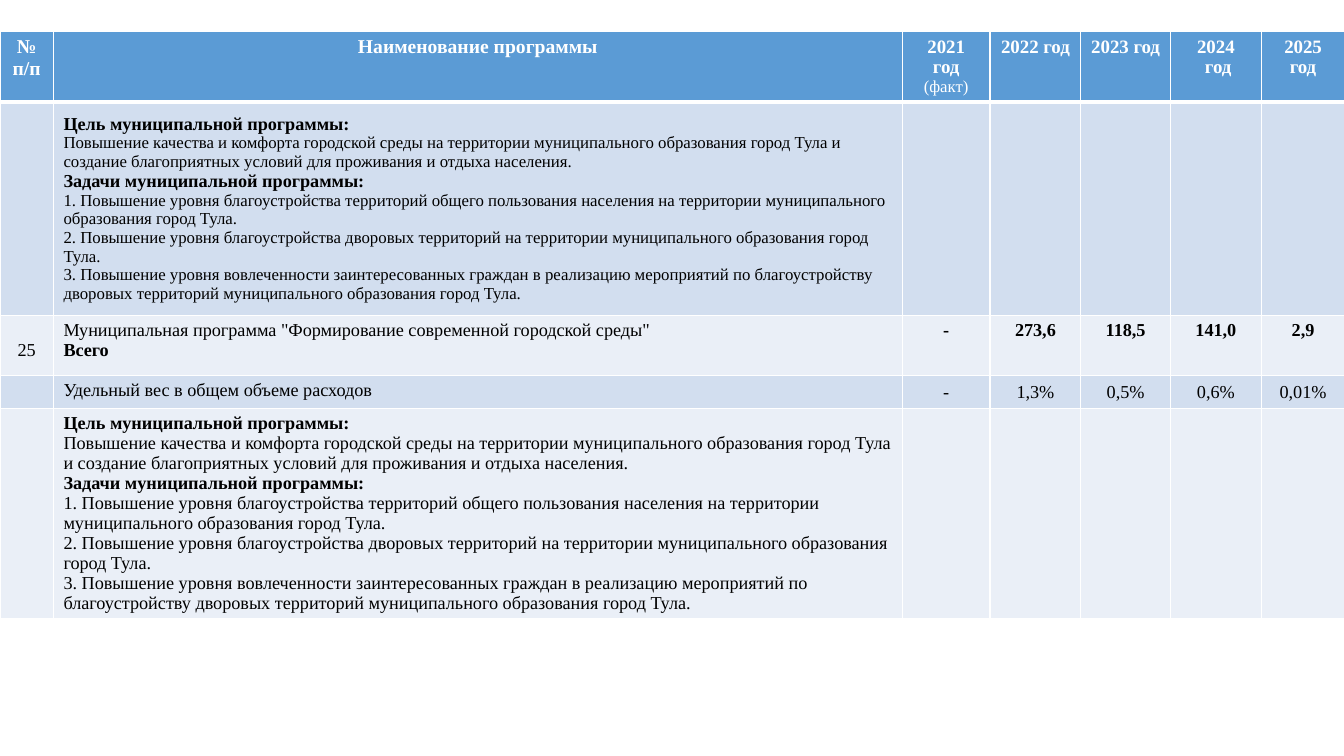
from dataclasses import dataclass

from lxml.etree import SubElement
from pptx import Presentation
from pptx.dml.color import RGBColor
from pptx.enum.text import MSO_ANCHOR, PP_ALIGN
from pptx.oxml.ns import qn
from pptx.util import Inches, Pt


@dataclass(frozen=True)
class Theme:
    font: str = "Times New Roman"
    header_fill: str = "5B9BD5"
    bands: tuple = ("D2DEEF", "EAEFF7")
    white: str = "FFFFFF"
    black: str = "000000"
    title_size: float = 14
    year_size: float = 13.5
    body_size: float = 13
    small_size: float = 12
    thin: float = 1
    thick: float = 3


class ProgramSlide:
    """Draws the programme table on one slide in a shared theme."""

    def __init__(self, presentation, theme):
        self.theme = theme
        self.slide = presentation.slides.add_slide(presentation.slide_layouts[6])

    def add_table(self, left, top, widths, heights):
        shape = self.slide.shapes.add_table(
            len(heights), len(widths), Inches(left), Inches(top),
            Inches(sum(widths)), Inches(sum(heights)))
        table = shape.table
        for column, width in zip(table.columns, widths):
            column.width = Inches(width)
        for row, height in zip(table.rows, heights):
            row.height = Inches(height)
        for index, row in enumerate(table.rows):
            for cell in row.cells:
                self.style_cell(cell, index)
        return table

    def style_cell(self, cell, row_index):
        theme = self.theme
        widths = {"lnL": theme.thin, "lnR": theme.thin,
                  "lnT": theme.thick if row_index == 1 else theme.thin,
                  "lnB": theme.thick if row_index == 0 else theme.thin}
        properties = cell._tc.get_or_add_tcPr()
        for name, width in widths.items():
            line = SubElement(properties, qn(f"a:{name}"), w=str(Pt(width)))
            fill = SubElement(line, qn("a:solidFill"))
            SubElement(fill, qn("a:srgbClr"), val=theme.white)
        color = theme.bands[(row_index - 1) % 2] if row_index else theme.header_fill
        cell.fill.solid()
        cell.fill.fore_color.rgb = RGBColor.from_string(color)
        end = SubElement(cell.text_frame.paragraphs[0]._p, qn("a:endParaRPr"))
        end.set("sz", str(int(theme.body_size * 100)))

    def add_text(self, cell, paragraphs, color, **cell_format):
        for name, value in cell_format.items():
            setattr(cell, name, value)
        frame = cell.text_frame
        for index, (alignment, runs) in enumerate(paragraphs):
            paragraph = frame.paragraphs[0] if index == 0 else frame.add_paragraph()
            paragraph.alignment = alignment
            for text, size, bold in runs:
                run = paragraph.add_run()
                run.text = text
                font_format = {"name": self.theme.font, "size": Pt(size), "bold": bold}
                for name, value in font_format.items():
                    setattr(run.font, name, value)
                run.font.color.rgb = RGBColor.from_string(color)

    def add_header(self, table):
        theme = self.theme
        year = theme.year_size
        headings = [
            [[("№ п/п", theme.title_size, True)]],
            [[("Наименование программы", theme.title_size, True)]],
            [[("2021 год ", year, True), ("(факт)", theme.small_size, False)]],
            [[("2022 год ", year, True)]],
            [[("2023 год", year, True)]],
            [[("2024", year, True)], [(" год", year, True)]],
            [[("2025", year, True)], [("год", year, True)]],
        ]
        for column, lines in enumerate(headings):
            paragraphs = [(PP_ALIGN.CENTER, runs) for runs in lines]
            self.add_text(table.cell(0, column), paragraphs, theme.white)

    def add_lines(self, cell, lines, text_size, **cell_format):
        paragraphs = [
            (PP_ALIGN.LEFT, [(text, self.theme.body_size if bold else text_size, bold)])
            for text, bold in lines]
        self.add_text(cell, paragraphs, self.theme.black, **cell_format)

    def add_values(self, table, row, values, bold, **cell_format):
        for column, value in enumerate(values, start=2):
            paragraphs = [(PP_ALIGN.CENTER, [(value, self.theme.body_size, bold)])]
            self.add_text(table.cell(row, column), paragraphs, self.theme.black, **cell_format)


GOALS = [
    ("Цель муниципальной программы:", True),
    ("Повышение качества и комфорта городской среды на территории муниципального "
     "образования город Тула и создание благоприятных условий для проживания и "
     "отдыха населения.", False),
    ("Задачи муниципальной программы:", True),
    ("1. Повышение уровня благоустройства территорий общего пользования населения "
     "на территории муниципального образования город Тула.", False),
    ("2. Повышение уровня благоустройства дворовых территорий на территории "
     "муниципального образования город Тула.", False),
    ("3. Повышение уровня вовлеченности заинтересованных граждан в реализацию "
     "мероприятий по благоустройству дворовых территорий муниципального "
     "образования город Тула.", False),
]
PROGRAM = [
    ('Муниципальная программа "Формирование современной городской среды"', False),
    ("Всего", True),
]
SHARE = [("Удельный вес в общем объеме расходов", False)]


def main():
    presentation = Presentation()
    presentation.slide_width = Inches(13.33)
    presentation.slide_height = Inches(7.5)
    theme = Theme()
    page = ProgramSlide(presentation, theme)
    table = page.add_table(0, 0.31, [0.53, 8.42, 0.87, 0.9, 0.89, 0.9, 0.83],
                           [0.65, 2.12, 0.6, 0.25, 1.85])
    page.add_header(table)
    page.add_lines(table.cell(1, 1), GOALS, theme.small_size,
                   vertical_anchor=MSO_ANCHOR.MIDDLE)
    number = [(PP_ALIGN.CENTER, [("25", theme.body_size, False)])]
    page.add_text(table.cell(2, 0), number, theme.black, margin_top=Inches(0.25))
    page.add_lines(table.cell(2, 1), PROGRAM, theme.body_size)
    page.add_values(table, 2, ["-", "273,6", "118,5", "141,0", "2,9"], True)
    page.add_lines(table.cell(3, 1), SHARE, theme.body_size)
    page.add_values(table, 3, ["-", "1,3%", "0,5%", "0,6%", "0,01%"], False,
                    vertical_anchor=MSO_ANCHOR.MIDDLE)
    page.add_lines(table.cell(4, 1), GOALS, theme.body_size)
    presentation.save("out.pptx")


if __name__ == "__main__":
    main()
